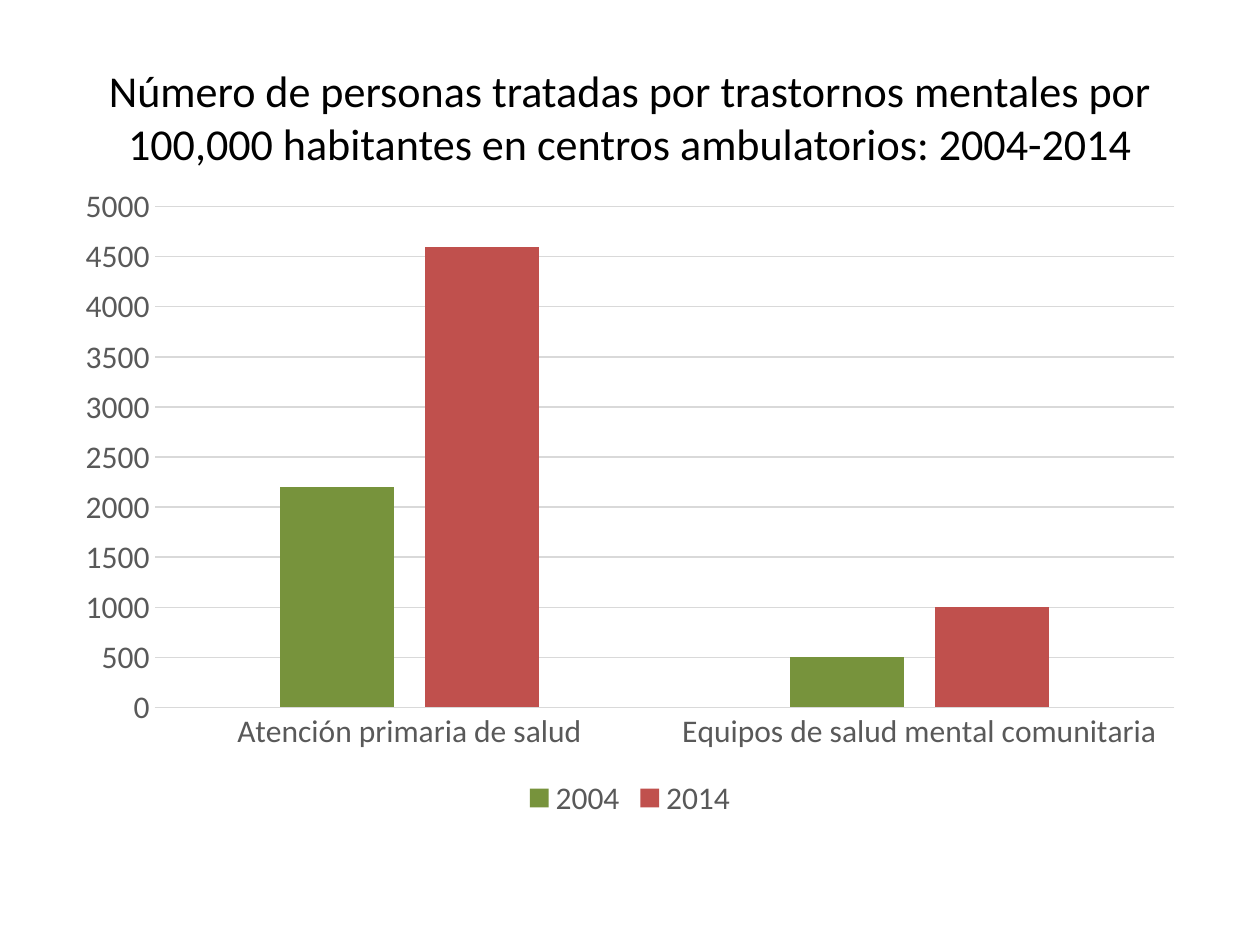
import pptx
import pptx.util
import pptx.chart.data
import pptx.dml.color
import pptx.enum.chart
import pptx.enum.text

Cm, Pt = pptx.util.Cm, pptx.util.Pt
RGB = pptx.dml.color.RGBColor.from_string
enum = pptx.enum.chart

TITLE = ("Número de personas tratadas por trastornos mentales por "
         "100,000 habitantes en centros ambulatorios: 2004-2014")
GROUPS = ["Atención primaria de salud", "Equipos de salud mental comunitaria"]
YEARS = {"2004": (2200, 500), "2014": (4600, 1000)}

THEME = {
    "font": "Calibri", "title": 25.2, "label": 18,
    "ink": "000000", "text": "595959", "grid": "D9D9D9",
    "bars": ["77933C", "C0504D"],
}
PAGE = (25.4, 19.05)
EDGE = 1.27
WIDE = PAGE[0] - 2 * EDGE
HEAD = (EDGE, 0.76, WIDE, 3.18)
PLOT = (EDGE, 3.52, WIDE, 13.08)


def apply(item, form):
    for key, value in form.items():
        setattr(item, key, value)


def style(font, size, color):
    apply(font, {"name": THEME["font"], "size": Pt(size), "bold": False})
    font.color.rgb = RGB(color)


def rule(line):
    line.color.rgb = RGB(THEME["grid"])
    line.width = Pt(0.75)


def add_title(slide):
    frame = slide.shapes.add_textbox(*map(Cm, HEAD)).text_frame
    apply(frame, {"word_wrap": True,
                  "vertical_anchor": pptx.enum.text.MSO_ANCHOR.MIDDLE})
    para = frame.paragraphs[0]
    para.alignment = pptx.enum.text.PP_ALIGN.CENTER
    run = para.add_run()
    run.text = TITLE
    style(run.font, THEME["title"], THEME["ink"])


def add_bars(slide):
    data = pptx.chart.data.CategoryChartData()
    data.categories = GROUPS
    for year, rates in YEARS.items():
        data.add_series(year, rates)
    kind = enum.XL_CHART_TYPE.COLUMN_CLUSTERED
    chart = slide.shapes.add_chart(kind, *map(Cm, PLOT), data).chart
    apply(chart, {"has_title": False, "has_legend": True})
    style(chart.font, 10, THEME["ink"])
    apply(chart.legend, {"position": enum.XL_LEGEND_POSITION.BOTTOM,
                         "include_in_layout": False})
    plot = chart.plots[0]
    apply(plot, {"gap_width": 219, "overlap": -27, "vary_by_categories": False})
    for series, color in zip(plot.series, THEME["bars"]):
        series.format.fill.solid()
        series.format.fill.fore_color.rgb = RGB(color)
        series.invert_if_negative = False

    cat, val = chart.category_axis, chart.value_axis
    none = enum.XL_TICK_MARK.NONE
    for axis in (cat, val):
        apply(axis, {"major_tick_mark": none, "minor_tick_mark": none})
    for part in (cat.tick_labels, val.tick_labels, chart.legend):
        style(part.font, THEME["label"], THEME["text"])
    apply(val, {"minimum_scale": 0, "maximum_scale": 5000, "major_unit": 500,
                "has_major_gridlines": True})
    rule(cat.format.line)
    rule(val.major_gridlines.format.line)
    val.format.line.fill.background()


def main():
    deck = pptx.Presentation()
    apply(deck, {"slide_width": Cm(PAGE[0]), "slide_height": Cm(PAGE[1])})
    slide = deck.slides.add_slide(deck.slide_layouts[6])
    add_title(slide)
    add_bars(slide)
    deck.save("out.pptx")


if __name__ == "__main__":
    main()
